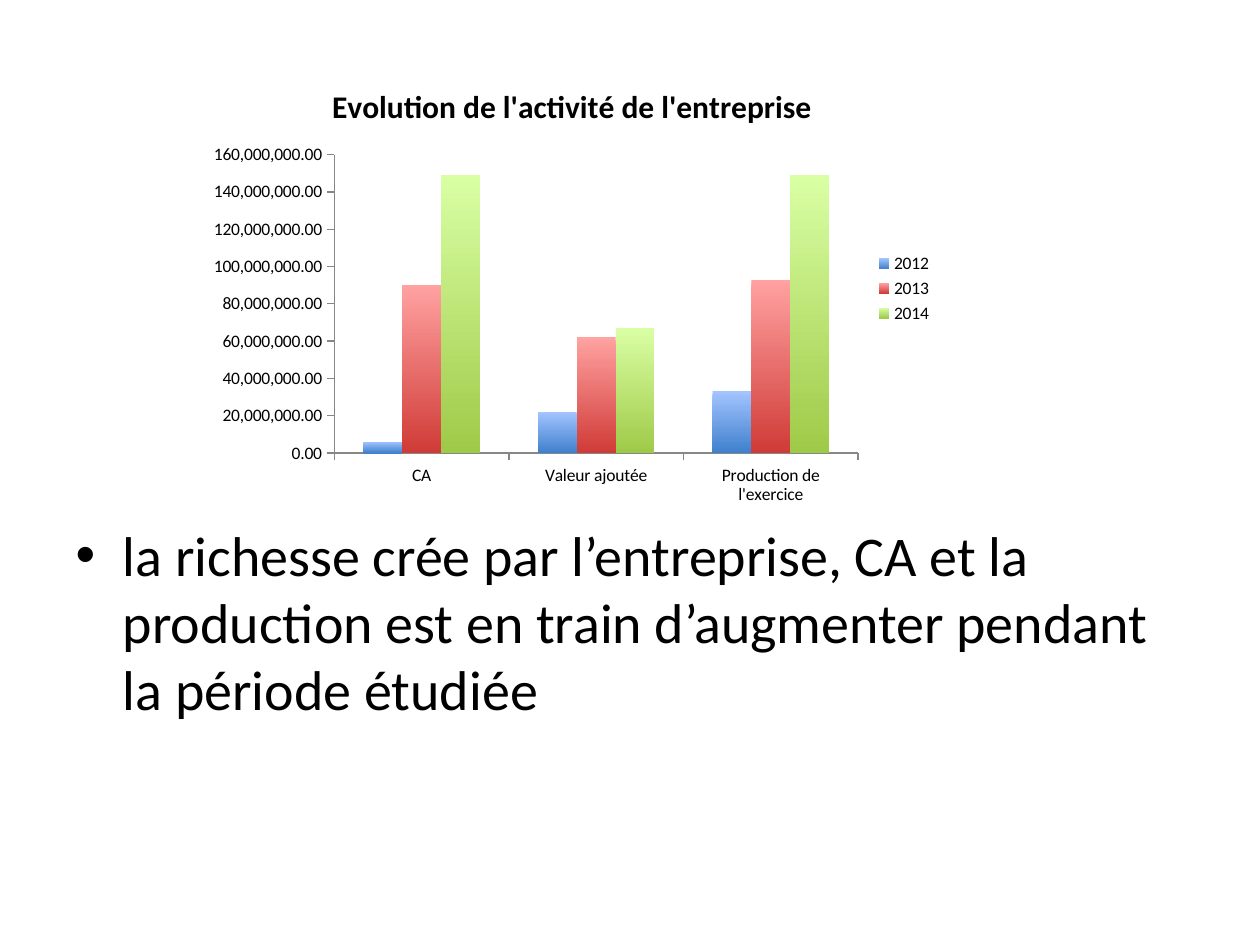
from pptx import Presentation
from pptx.chart.data import CategoryChartData
from pptx.dml.color import RGBColor
from pptx.enum.chart import XL_CHART_TYPE as ChartType
from pptx.enum.chart import XL_LEGEND_POSITION as LegendPosition
from pptx.enum.chart import XL_TICK_MARK as TickMark
from pptx.util import Emu, Pt

PX = 914400 // 126
FONT = "Calibri"
NUMBER_FORMAT = "#,##0.00"
CATEGORIES = ["CA", "Valeur ajoutée", "Production de l'exercice"]
# year: (values, top colour, bottom colour)
SERIES = {
    "2012": ([6000000, 22000000, 33000000], "A3C4FF", "3F80CD"),
    "2013": ([90000000, 62000000, 93000000], "FFA2A1", "D03B37"),
    "2014": ([149000000, 67000000, 149000000], "D9FFA4", "9FCA48"),
}


def px(*lengths):
    return [Emu(length * PX) for length in lengths]


def color(value):
    return RGBColor.from_string(value)


def set_font(font, size, bold=False, ink="000000"):
    font.name = FONT
    font.size = Pt(size)
    font.bold = bold
    font.color.rgb = color(ink)


def write_text(frame, text, size, **style):
    para = frame.paragraphs[0]
    span = para.add_run()
    span.text = text
    set_font(span.font, size, **style)
    return para


def fill_gradient(fill, top, bottom):
    fill.gradient()
    fill.gradient_angle = 270
    for stop, shade in zip(fill.gradient_stops, (top, bottom)):
        stop.color.rgb = color(shade)


def style_axis(axis):
    axis.has_major_gridlines = False
    axis.major_tick_mark = TickMark.OUTSIDE
    axis.minor_tick_mark = TickMark.NONE
    axis.format.line.color.rgb = color("878787")
    axis.format.line.width = Pt(0.75)


def add_activity_chart(slide, left, top, width, height):
    data = CategoryChartData(number_format=NUMBER_FORMAT)
    data.categories = CATEGORIES
    for year, (values, _, _) in SERIES.items():
        data.add_series(year, values)
    chart = slide.shapes.add_chart(
        ChartType.COLUMN_CLUSTERED, *px(left, top, width, height), data
    ).chart
    set_font(chart.font, 10)

    chart.has_title = True
    write_text(chart.chart_title.text_frame,
               "Evolution de l'activité de l'entreprise", 18, bold=True)
    chart.chart_title.include_in_layout = False

    chart.has_legend = True
    chart.legend.position = LegendPosition.RIGHT
    chart.legend.include_in_layout = False

    for axis in (chart.category_axis, chart.value_axis):
        style_axis(axis)
    labels = chart.value_axis.tick_labels
    labels.number_format = NUMBER_FORMAT
    labels.number_format_is_linked = False

    plot = chart.plots[0]
    plot.vary_by_categories = False
    plot.gap_width = 150
    for series, (_, top_color, bottom_color) in zip(plot.series, SERIES.values()):
        fill_gradient(series.format.fill, top_color, bottom_color)


def fill_body(body, text, left, top, width, height):
    """Place the body placeholder, whose layout supplies the bullet."""
    body.left, body.top, body.width, body.height = px(left, top, width, height)
    write_text(body.text_frame, text, 32).space_before = Pt(0)


def main():
    deck = Presentation()
    deck.slide_width, deck.slide_height = px(1260, 945)
    slide = deck.slides.add_slide(deck.slide_layouts[1])
    title = slide.shapes.title.element
    title.getparent().remove(title)

    fill_body(slide.placeholders[1],
              "la richesse crée par l’entreprise, CA et la production est en "
              "train d’augmenter pendant la période étudiée",
              63, 514, 1134, 330)
    add_activity_chart(slide, 199, 63, 746, 451)
    deck.save("out.pptx")


if __name__ == "__main__":
    main()
